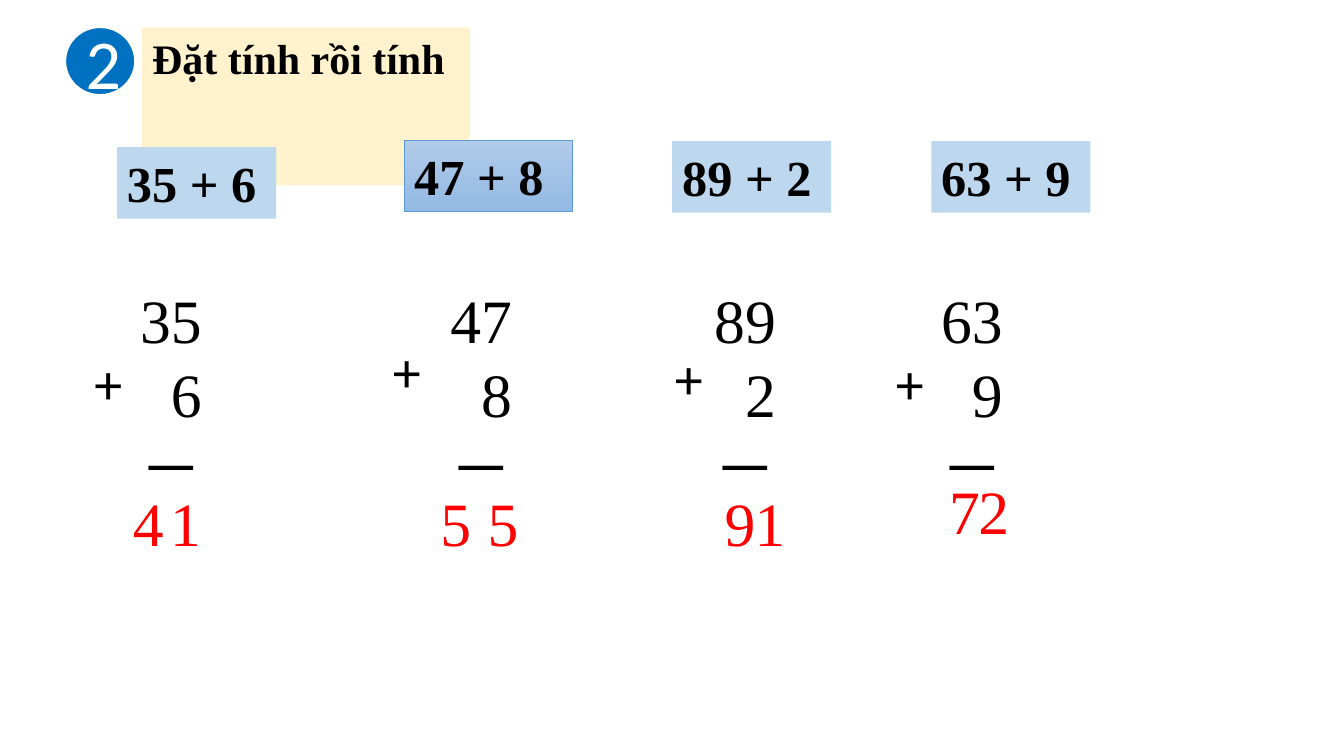
from pptx import Presentation
from pptx.dml.color import RGBColor
from pptx.enum.shapes import MSO_SHAPE
from pptx.enum.text import MSO_ANCHOR, MSO_AUTO_SIZE, PP_ALIGN
from pptx.util import Cm, Pt

RECT, OVAL = MSO_SHAPE.RECTANGLE, MSO_SHAPE.OVAL
TOP, MIDDLE = MSO_ANCHOR.TOP, MSO_ANCHOR.MIDDLE
LEFT, CENTER = PP_ALIGN.LEFT, PP_ALIGN.CENTER
GROW, FIXED = MSO_AUTO_SIZE.SHAPE_TO_FIT_TEXT, MSO_AUTO_SIZE.NONE

BLACK, WHITE, RED = "000000", "FFFFFF", "FF0000"
BLUE, CREAM, PALE_BLUE = "0070C0", "FFF2CC", "BDD7EE"
SERIF, SANS = "Times New Roman", "Calibri"

# numbers, label (left, top, width), working (left, width), plus (left, top),
# answer digits (tens left, ones left, top); all in cm
SUMS = [
    (35, 6, (2.95, 3.71, 4.01), (3.28, 4.6), (2.13, 8.66), (3.1, 4.04, 12.09)),
    (47, 8, (10.19, 3.53, 4.24), (11.1, 6.4), (9.65, 8.36), (10.85, 12.04, 12.09)),
    (89, 2, (16.94, 3.56, 4.01), (17.75, 6.4), (16.76, 8.53), (18.01, 18.77, 12.09)),
    (63, 9, (23.47, 3.56, 4.01), (23.47, 7.62), (22.33, 8.66), (23.67, 24.41, 11.8)),
]
HIGHLIGHTED = 47


def rgb(color):
    return RGBColor.from_string(color)


def write(sp, *lines, size=44, font=SERIF, color=BLACK, bold=False,
          align=LEFT, anchor=TOP, auto_size=GROW):
    """Put one paragraph per line into the shape and format it."""
    tf = sp.text_frame
    tf.word_wrap = True
    tf.auto_size = auto_size
    tf.vertical_anchor = anchor
    tf.text = "\n".join(lines)
    for p in tf.paragraphs:
        p.alignment = align
        for r in p.runs:
            r.font.size = Pt(size)
            r.font.name = font
            r.font.bold = bold
            r.font.color.rgb = rgb(color)


class Lesson:
    def __init__(self, prs):
        self.slide = prs.slides.add_slide(prs.slide_layouts[5])

    def title(self, text, x, y, w, h):
        sp = self.slide.shapes.title
        sp.left, sp.top, sp.width, sp.height = Cm(x), Cm(y), Cm(w), Cm(h)
        sp.fill.solid()
        sp.fill.fore_color.rgb = rgb(CREAM)
        write(sp, text, size=30, bold=True)

    def text(self, *lines, x, y, w, h, **style):
        sp = self.slide.shapes.add_textbox(Cm(x), Cm(y), Cm(w), Cm(h))
        write(sp, *lines, **style)
        return sp

    def shape(self, kind, text, x, y, w, h, fill, line=None, weight=1, **style):
        """Add a filled shape; a pair of colours as fill makes a gradient."""
        sp = self.slide.shapes.add_shape(kind, Cm(x), Cm(y), Cm(w), Cm(h))
        sp.shadow.inherit = False
        if isinstance(fill, tuple):
            sp.fill.gradient()
            sp.fill.gradient_angle = 270
            for position, (stop, color) in enumerate(zip(sp.fill.gradient_stops, fill)):
                stop.position = position
                stop.color.rgb = rgb(color)
        else:
            sp.fill.solid()
            sp.fill.fore_color.rgb = rgb(fill)
        if line:
            sp.line.color.rgb = rgb(line)
            sp.line.width = Pt(weight)
        else:
            sp.line.fill.background()
        write(sp, text, **style)

    def working(self, first, second, x, w):
        """Write the sum in columns, the second number one digit to the right."""
        sp = self.text(str(first), str(second), "－", x=x, y=6.99, w=w, h=5.89)
        pPr = sp.text_frame.paragraphs[1]._p.get_or_add_pPr()
        pPr.set("marL", str(Pt(22)))
        pPr.set("indent", "0")

    def sum(self, first, second, label, working, plus, answer):
        x, y, w = label
        look = {"fill": PALE_BLUE}
        if first == HIGHLIGHTED:
            look = {"fill": ("B1CBE9", "93B9E4"), "line": "5B9BD5", "weight": 0.5}
        self.shape(RECT, f"{first} + {second}", x, y, w, 1.8,
                   size=36, bold=True, **look)
        self.working(first, second, *working)
        self.text("+", x=plus[0], y=plus[1], w=1.14, h=1.96, size=40, font=SANS)
        *lefts, top = answer
        for digit, left in zip(str(first + second), lefts):
            self.text(digit, x=left, y=top, w=1.3, h=2.13, color=RED)


def main():
    prs = Presentation()
    prs.slide_width, prs.slide_height = Cm(33.87), Cm(19.05)
    lesson = Lesson(prs)
    lesson.title("Đặt tính rồi tính", 3.58, 0.69, 8.26, 1.55)
    lesson.shape(OVAL, "2", 1.65, 0.69, 1.75, 1.7, BLUE, line=WHITE, size=50,
                 font=SANS, color=WHITE, align=CENTER, anchor=MIDDLE,
                 auto_size=FIXED)
    for row in SUMS:
        lesson.sum(*row)
    prs.save("out.pptx")


if __name__ == "__main__":
    main()
